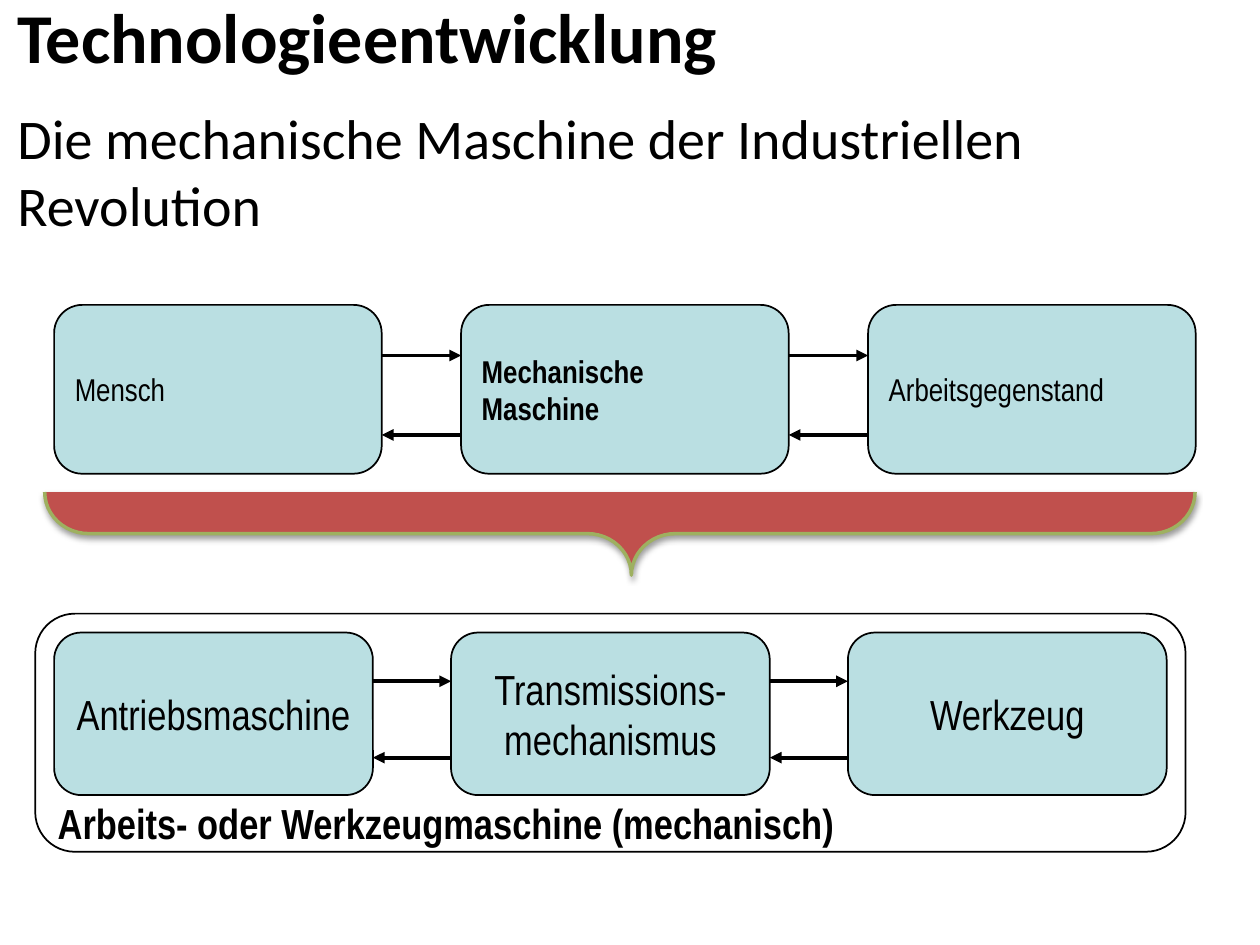
from lxml import etree
from pptx import Presentation
from pptx.dml.color import RGBColor
from pptx.enum import shapes, text
from pptx.oxml import ns
from pptx.util import Inches, Pt

KIND = shapes.MSO_SHAPE
MID = text.MSO_ANCHOR.MIDDLE


def tint(code):
    return RGBColor.from_string(code)


def node(root, tag, **attrs):
    return etree.SubElement(root, ns.qn(tag), attrs)


class Deck:
    ink = "000000"
    box = "BADFE2"
    face = "Arial Narrow"

    def __init__(self, slide):
        self.items = slide.shapes

    def fill_text(self, frame, lines, size, bold=False, align=None, face=None):
        frame.text = "\n".join(lines)
        for par in frame.paragraphs:
            par.alignment = align
            font = par.font
            font.name, font.size, font.bold = face or self.face, Pt(size), bold
            font.color.rgb = tint(self.ink)

    def label(self, x, y, w, h, words, size, bold=False, face=None, anchor=None):
        frame = self.items.add_textbox(*map(Inches, (x, y, w, h))).text_frame
        frame.word_wrap = True
        frame.vertical_anchor = anchor
        self.fill_text(frame, [words], size, bold, face=face)

    def shape(self, kind, x, y, w, h, fill=None, line=ink, width=1):
        item = self.items.add_shape(kind, *map(Inches, (x, y, w, h)))
        item.shadow.inherit = False
        if fill:
            item.fill.solid()
            item.fill.fore_color.rgb = tint(fill)
        else:
            item.fill.background()
        item.line.color.rgb = tint(line)
        item.line.width = Pt(width)
        return item

    def arrow(self, start, end, y):
        link = self.items.add_connector(
            shapes.MSO_CONNECTOR.STRAIGHT,
            Inches(start), Inches(y), Inches(end), Inches(y))
        link.line.color.rgb = tint(self.ink)
        link.line.width = Pt(2.25)
        props = link._element.spPr
        node(props.find(ns.qn("a:ln")), "a:tailEnd", type="triangle")
        node(props, "a:effectLst")

    def chain(self, x, y, w, h, step, cells, size, align):
        """Draw a row of boxes with a pair of opposed arrows in each gap."""
        for i, (lines, bold) in enumerate(cells):
            left = x + i * step
            item = self.shape(KIND.ROUNDED_RECTANGLE, left, y, w, h, self.box)
            frame = item.text_frame
            frame.word_wrap = align == text.PP_ALIGN.LEFT
            frame.vertical_anchor = MID
            self.fill_text(frame, lines, size, bold, align)
            if i:
                self.arrow(left - step + w, left, y + 0.3 * h)
                self.arrow(left, left - step + w, y + 0.77 * h)

    def brace(self, x, y, w, h):
        """Draw a left brace turned to point down, with a soft shadow."""
        item = self.shape(KIND.LEFT_BRACE, x, y, w, h, "C0504D", "9EB060", 2)
        item.rotation = 270
        item.adjustments[0] = 0.53
        item.adjustments[1] = 0.51
        effects = item._element.spPr.find(ns.qn("a:effectLst"))
        shade = node(effects, "a:outerShdw", blurRad=str(Pt(3.1)),
                     dist=str(Pt(1.6)), dir="5400000", rotWithShape="0")
        color = node(shade, "a:srgbClr", val=self.ink)
        node(color, "a:alpha", val="38000")


def main():
    prs = Presentation()
    prs.slide_width, prs.slide_height = Inches(10), Inches(7.5)
    deck = Deck(prs.slides.add_slide(prs.slide_layouts[6]))

    deck.label(0.04, 0.77, 9, 4.95,
               "Die mechanische Maschine der Industriellen Revolution",
               32, face="Calibri")
    deck.chain(0.43, 2.42, 2.6, 1.34, 3.23,
               [(["Mensch"], False),
                (["Mechanische", "Maschine"], True),
                (["Arbeitsgegenstand"], False)],
               18, text.PP_ALIGN.LEFT)
    deck.chain(0.43, 5.02, 2.53, 1.29, 3.15,
               [(["Antriebsmaschine"], False),
                (["Transmissions-", "mechanismus"], False),
                (["Werkzeug"], False)],
               24, text.PP_ALIGN.CENTER)
    deck.shape(KIND.ROUNDED_RECTANGLE, 0.28, 4.87, 9.13, 1.89)
    deck.label(0.36, 6.28, 8.66, 0.51,
               "Arbeits- oder Werkzeugmaschine (mechanisch)", 24, True)
    deck.label(0.04, 0.05, 9.07, 0.47, "Technologieentwicklung",
               40, True, "Calibri", MID)
    deck.brace(4.59, -0.33, 0.66, 9.13)

    prs.save("out.pptx")


if __name__ == "__main__":
    main()
